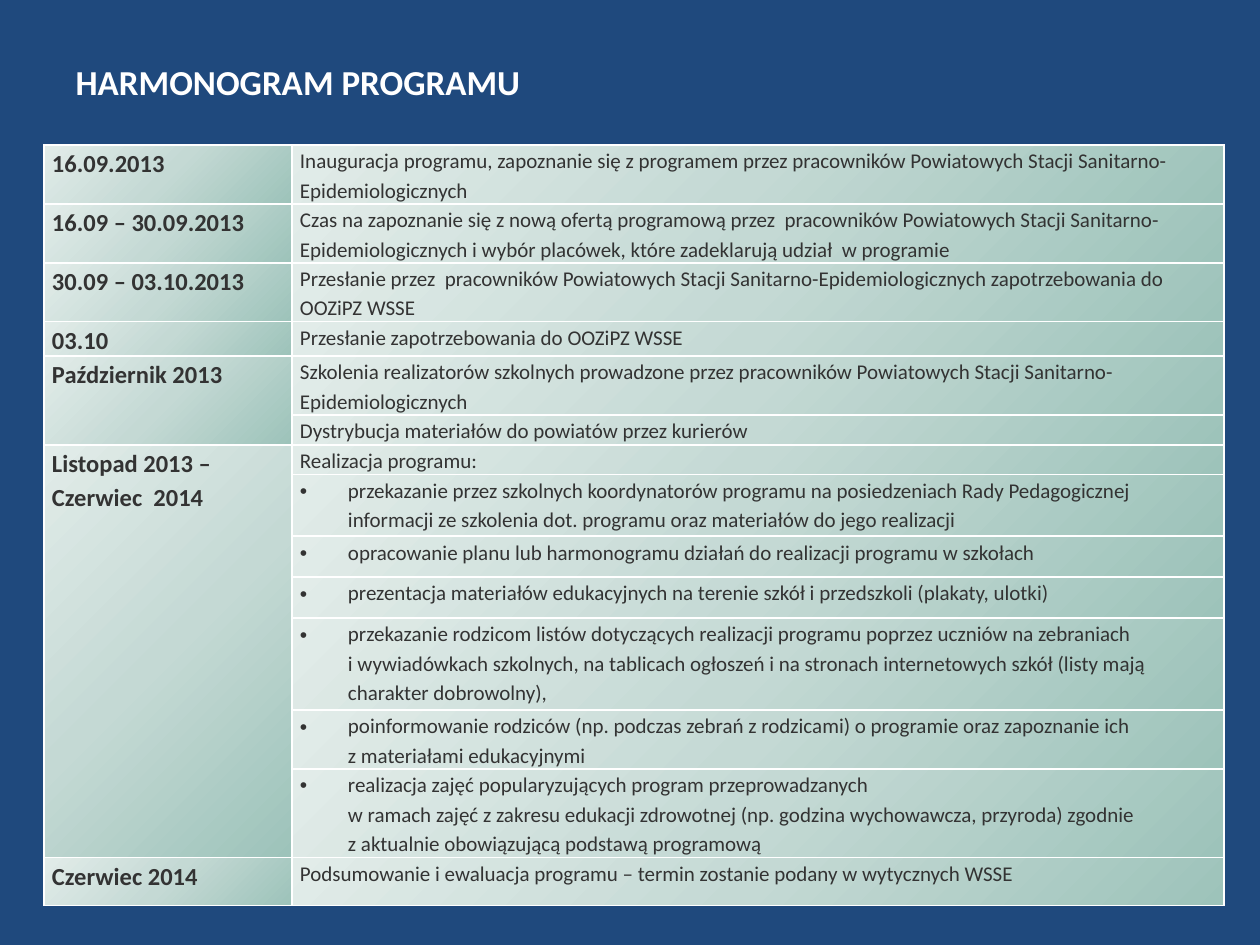
from copy import deepcopy
from dataclasses import dataclass

from lxml import etree
from pptx import Presentation
from pptx.dml.color import RGBColor
from pptx.enum.text import MSO_ANCHOR, PP_ALIGN
from pptx.oxml.ns import qn
from pptx.util import Emu, Pt

LEFT = PP_ALIGN.LEFT
MIDDLE = MSO_ANCHOR.MIDDLE
TOP = MSO_ANCHOR.TOP
TITLE_ONLY = 5
PX_PER_INCH = 126


@dataclass(frozen=True)
class Theme:
    font: str = "Calibri"
    background: str = "1F497D"
    title: str = "FFFFFF"
    ink: str = "333333"
    border: str = "FFFFFF"
    gradient: tuple = ((0, "9DC3BA"), (50, "C4D9D4"), (100, "E2ECE9"))
    gradient_angle: int = 225
    title_size: int = 20
    date_size: int = 14
    task_size: int = 12
    line_spacing: float = 1.15


@dataclass(frozen=True)
class Task:
    text: str
    height: int
    bulleted: bool = False


@dataclass(frozen=True)
class Stage:
    date: str
    tasks: tuple[Task, ...]


THEME = Theme()
COLUMN_WIDTHS = (248, 932)
CELL_MARGIN = 8
BULLET_INDENT = 48

SCHEDULE = (
    Stage("16.09.2013", (
        Task("Inauguracja programu, zapoznanie się z programem przez pracowników "
             "Powiatowych Stacji Sanitarno-Epidemiologicznych", 58),)),
    Stage("16.09 – 30.09.2013", (
        Task("Czas na zapoznanie się z nową ofertą programową przez  pracowników "
             "Powiatowych Stacji Sanitarno-Epidemiologicznych i wybór placówek, "
             "które zadeklarują udział  w programie", 58),)),
    Stage("30.09 – 03.10.2013", (
        Task("Przesłanie przez  pracowników Powiatowych Stacji "
             "Sanitarno-Epidemiologicznych zapotrzebowania do OOZiPZ WSSE", 58),)),
    Stage("03.10", (Task("Przesłanie zapotrzebowania do OOZiPZ WSSE", 34),)),
    Stage("Październik 2013", (
        Task("Szkolenia realizatorów szkolnych prowadzone przez pracowników "
             "Powiatowych Stacji Sanitarno-Epidemiologicznych", 58),
        Task("Dystrybucja materiałów do powiatów przez kurierów", 30))),
    Stage("Listopad 2013 – Czerwiec  2014", (
        Task("Realizacja programu:", 28),
        Task("przekazanie przez szkolnych koordynatorów programu na posiedzeniach "
             "Rady Pedagogicznej informacji ze szkolenia dot. programu oraz "
             "materiałów do jego realizacji", 62, True),
        Task("opracowanie planu lub harmonogramu działań do realizacji programu "
             "w szkołach", 41, True),
        Task("prezentacja materiałów edukacyjnych na terenie szkół i przedszkoli "
             "(plakaty, ulotki)", 41, True),
        Task("przekazanie rodzicom listów dotyczących realizacji programu poprzez "
             "uczniów na zebraniach \ni wywiadówkach szkolnych, na tablicach "
             "ogłoszeń i na stronach internetowych szkół (listy mają charakter "
             "dobrowolny),", 92, True),
        Task("poinformowanie rodziców (np. podczas zebrań z rodzicami) o programie "
             "oraz zapoznanie ich \nz materiałami edukacyjnymi", 58, True),
        Task("realizacja zajęć popularyzujących program przeprowadzanych \n"
             "w ramach zajęć z zakresu edukacji zdrowotnej (np. godzina "
             "wychowawcza, przyroda) zgodnie \nz aktualnie obowiązującą podstawą "
             "programową", 83, True))),
    Stage("Czerwiec 2014", (
        Task("Podsumowanie i ewaluacja programu – termin zostanie podany "
             "w wytycznych WSSE", 48),)),
)


def px(length: int) -> Emu:
    return Emu(round(length * 914400 / PX_PER_INCH))


def format_runs(paragraph, size: int, color: str, bold: bool) -> None:
    for run in paragraph.runs:
        run.font.name = THEME.font
        run.font.size = Pt(size)
        run.font.bold = bold
        run.font.color.rgb = RGBColor.from_string(color)
    for line_break in paragraph._p.findall(qn("a:br")):
        line_break.append(deepcopy(paragraph.runs[0].font._element))


def add_color(parent, color: str) -> None:
    etree.SubElement(parent, qn("a:srgbClr"), val=color)


def style_cell(cell) -> None:
    """Set margins, white borders and the diagonal gradient."""
    cell.margin_left = cell.margin_right = px(CELL_MARGIN)
    cell.margin_top = cell.margin_bottom = 0
    cell.vertical_anchor = TOP
    properties = cell._tc.get_or_add_tcPr()
    for side in ("lnL", "lnR", "lnT", "lnB"):
        line = etree.SubElement(properties, qn(f"a:{side}"), w=str(Pt(1)))
        add_color(etree.SubElement(line, qn("a:solidFill")), THEME.border)
    gradient = etree.SubElement(properties, qn("a:gradFill"), rotWithShape="1")
    stops = etree.SubElement(gradient, qn("a:gsLst"))
    for percent, color in THEME.gradient:
        add_color(etree.SubElement(stops, qn("a:gs"), pos=str(percent * 1000)), color)
    etree.SubElement(gradient, qn("a:lin"),
                     ang=str(THEME.gradient_angle * 60000), scaled="0")


def write_cell(cell, text: str, size: int, bold: bool = False,
               bulleted: bool = False) -> None:
    paragraph = cell.text_frame.paragraphs[0]
    paragraph.text = text
    if bulleted:
        properties = paragraph._p.get_or_add_pPr()
        properties.set("marL", str(px(BULLET_INDENT)))
        properties.set("indent", str(-px(BULLET_INDENT)))
        etree.SubElement(properties, qn("a:buFont"), typeface="Arial")
        etree.SubElement(properties, qn("a:buChar"), char="•")
    paragraph.line_spacing = THEME.line_spacing
    format_runs(paragraph, size, THEME.ink, bold)


def add_title(slide, text: str) -> None:
    title = slide.shapes.title
    title.left, title.top, title.width, title.height = map(px, (63, 28, 1134, 107))
    title.text_frame.text = text
    title.text_frame.vertical_anchor = MIDDLE
    heading = title.text_frame.paragraphs[0]
    heading.alignment = LEFT
    format_runs(heading, THEME.title_size, THEME.title, True)


def add_schedule(slide, stages: tuple[Stage, ...]) -> None:
    heights = [task.height for stage in stages for task in stage.tasks]
    table = slide.shapes.add_table(
        len(heights), len(COLUMN_WIDTHS), px(44), px(145),
        px(sum(COLUMN_WIDTHS)), px(sum(heights))).table
    table.first_row = table.horz_banding = False
    for column, width in zip(table.columns, COLUMN_WIDTHS):
        column.width = px(width)
    for row, height in zip(table.rows, heights):
        row.height = px(height)
    for cell in table.iter_cells():
        style_cell(cell)

    first = 0
    for stage in stages:
        last = first + len(stage.tasks) - 1
        date_cell = table.cell(first, 0)
        if last > first:
            date_cell.merge(table.cell(last, 0))
        write_cell(date_cell, stage.date, THEME.date_size, bold=True)
        for row, task in enumerate(stage.tasks, first):
            write_cell(table.cell(row, 1), task.text, THEME.task_size,
                       bulleted=task.bulleted)
        first = last + 1


def main() -> None:
    presentation = Presentation()
    presentation.slide_width, presentation.slide_height = px(1260), px(945)
    slide = presentation.slides.add_slide(presentation.slide_layouts[TITLE_ONLY])
    background = slide.background.fill
    background.solid()
    background.fore_color.rgb = RGBColor.from_string(THEME.background)
    add_title(slide, "HARMONOGRAM PROGRAMU")
    add_schedule(slide, SCHEDULE)
    presentation.save("out.pptx")


if __name__ == "__main__":
    main()
